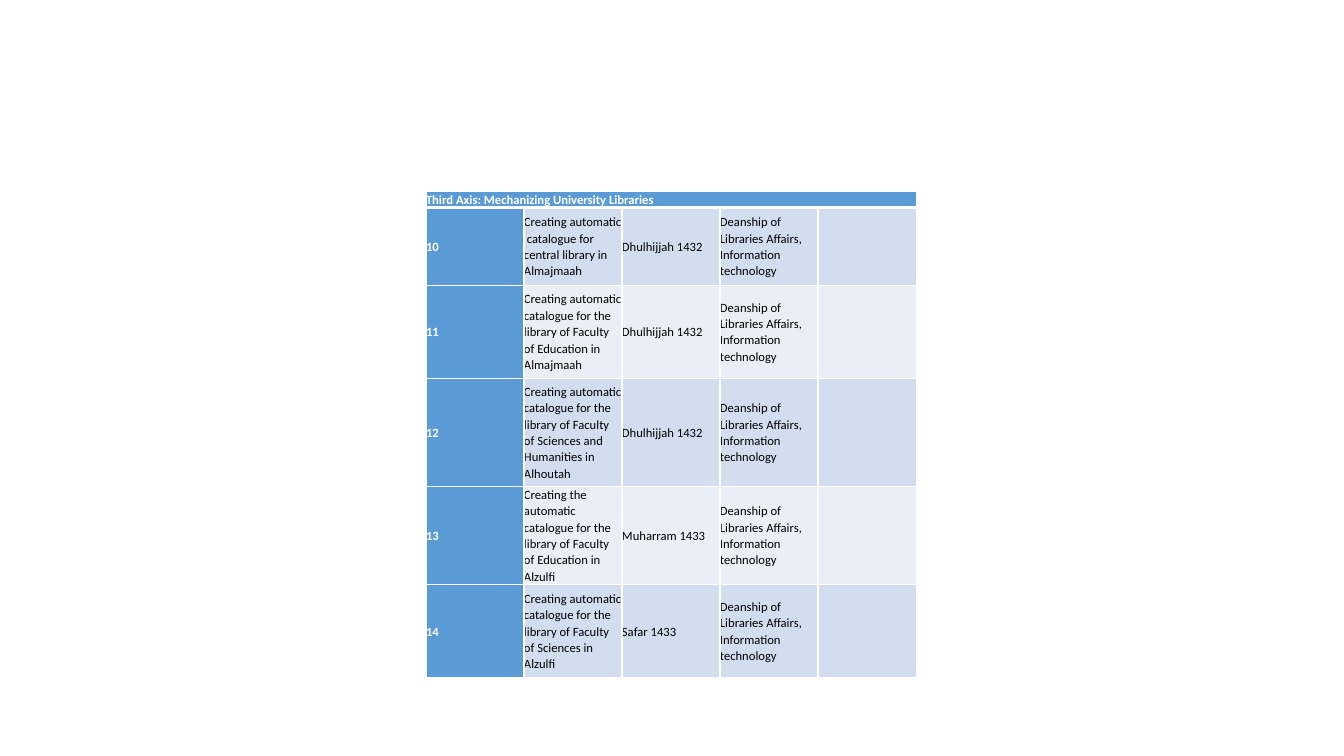
import pptx
import pptx.dml.color
import pptx.enum.text
import pptx.oxml.ns
import pptx.util
from lxml import etree

PX = 914400 / 100.8
WHITE, BLACK, BLUE = "FFFFFF", "000000", "5B9BD5"
BANDS = ["D2DEEF", "EAEFF7"]
COLUMN_WIDTHS = [98, 98, 98, 98, 99]
ROW_HEIGHTS = [15, 78, 93, 108, 93, 93]
HEADING = "Third Axis: Mechanizing University Libraries"
DEANSHIP = "Deanship of Libraries Affairs, Information technology"
TASKS = [
    ("Creating automatic  catalogue for central library in Almajmaah", "Dhulhijjah 1432"),
    ("Creating automatic catalogue for the library of Faculty of Education in Almajmaah",
     "Dhulhijjah 1432"),
    ("Creating automatic catalogue for the library of Faculty of Sciences and Humanities in Alhoutah",
     "Dhulhijjah 1432"),
    ("Creating the automatic catalogue for the library of Faculty of Education in Alzulfi",
     "Muharram 1433"),
    ("Creating automatic catalogue for the library of Faculty of Sciences in Alzulfi",
     "Safar 1433"),
]


def px(length):
    return pptx.util.Emu(round(length * PX))


def color(code):
    return pptx.dml.color.RGBColor.from_string(code)


def write_text(cell, text, size=9, font="Calibri", fill=BLACK, bold=False):
    para = cell.text_frame.paragraphs[0]
    para.line_spacing = 1.07
    para.space_after = pptx.util.Pt(8)
    span = para.add_run()
    span.text = text
    span.font.size = pptx.util.Pt(size)
    span.font.name = font
    span.font.bold = bold
    span.font.color.rgb = color(fill)


def draw_borders(cell, top=1, bottom=1):
    properties = cell._tc.get_or_add_tcPr()
    for side, points in (("L", 1), ("R", 1), ("T", top), ("B", bottom)):
        line = etree.SubElement(properties, pptx.oxml.ns.qn(f"a:ln{side}"),
                                w=str(pptx.util.Pt(points)))
        solid = etree.SubElement(line, pptx.oxml.ns.qn("a:solidFill"))
        etree.SubElement(solid, pptx.oxml.ns.qn("a:srgbClr"), val=WHITE)


def style_cell(cell, fill, **borders):
    cell.margin_left = cell.margin_right = cell.margin_top = cell.margin_bottom = 0
    cell.vertical_anchor = pptx.enum.text.MSO_ANCHOR.MIDDLE
    draw_borders(cell, **borders)
    cell.fill.solid()
    cell.fill.fore_color.rgb = color(fill)


def add_task_table(page, left, top):
    frame = page.shapes.add_table(len(ROW_HEIGHTS), len(COLUMN_WIDTHS), px(left), px(top),
                                  px(sum(COLUMN_WIDTHS)), px(sum(ROW_HEIGHTS)))
    table = frame.table
    for column, width in zip(table.columns, COLUMN_WIDTHS):
        column.width = px(width)
    for row, height in zip(table.rows, ROW_HEIGHTS):
        row.height = px(height)

    for cell in table.rows[0].cells:
        style_cell(cell, BLUE, bottom=3)
    table.cell(0, 0).merge(table.cell(0, len(COLUMN_WIDTHS) - 1))
    write_text(table.cell(0, 0), HEADING, fill=WHITE, bold=True)

    for index, (task, date) in enumerate(TASKS):
        texts = [str(10 + index), task, date, DEANSHIP, ""]
        for number, text in enumerate(texts):
            cell = table.cell(index + 1, number)
            is_label = number == 0
            style_cell(cell, BLUE if is_label else BANDS[index % 2],
                       top=3 if index == 0 else 1)
            if text:
                write_text(cell, text, fill=WHITE if is_label else BLACK, bold=is_label)


def main():
    deck = pptx.Presentation()
    deck.slide_width, deck.slide_height = px(1344), px(756)
    page = deck.slides.add_slide(deck.slide_layouts[6])
    add_task_table(page, left=426, top=191)
    deck.save("out.pptx")


if __name__ == "__main__":
    main()
